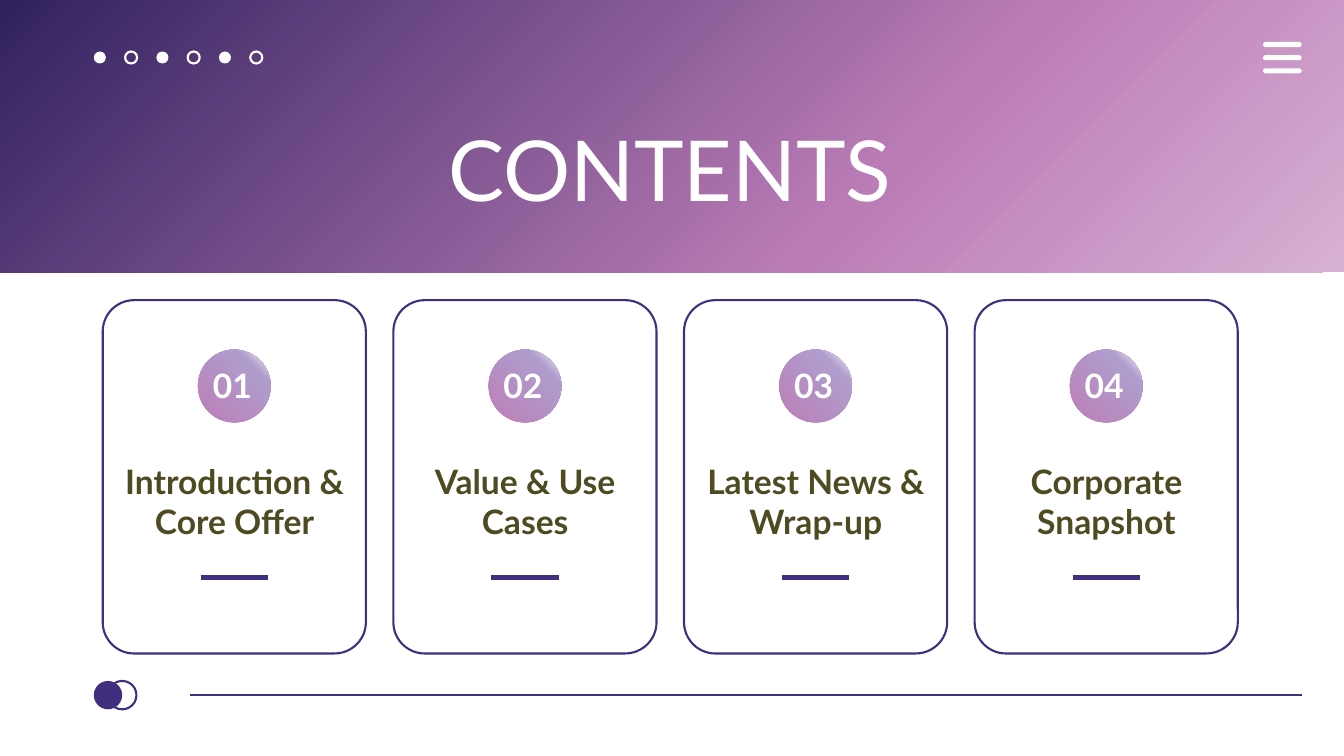
from lxml import etree
from pptx import Presentation
from pptx.dml.color import RGBColor
from pptx.enum import shapes, text
from pptx.oxml.ns import qn
from pptx.util import Pt

INDIGO, WHITE, OLIVE = "402E7F", "FFFFFF", "4E4B22"
Shape = shapes.MSO_SHAPE


def add_figure(kind, left, top, width, height, fill=None, line=None, angle=0):
    """Add a preset shape; fill is a hex colour or a list of (percent, hex) stops."""
    figure = slide.shapes.add_shape(kind, Pt(left), Pt(top), Pt(width), Pt(height))
    figure.shadow.inherit = False
    if fill is None:
        figure.fill.background()
    elif isinstance(fill, str):
        figure.fill.solid()
        figure.fill.fore_color.rgb = RGBColor.from_string(fill)
    else:
        figure.fill.gradient()
        figure.fill.gradient_angle = angle
        stops = figure._element.spPr.find(".//" + qn("a:gsLst"))
        for stop in list(stops):
            stops.remove(stop)
        for percent, color in fill:
            stop = etree.SubElement(stops, qn("a:gs"), pos=str(percent * 1000))
            etree.SubElement(stop, qn("a:srgbClr"), val=color)
    if line:
        figure.line.color.rgb = RGBColor.from_string(line)
        figure.line.width = Pt(1.5)
    else:
        figure.line.fill.background()
    return figure


def add_rule(left, right, y, weight):
    rule = slide.shapes.add_connector(
        shapes.MSO_CONNECTOR.STRAIGHT, Pt(left), Pt(y), Pt(right), Pt(y))
    rule.line.color.rgb = RGBColor.from_string(INDIGO)
    rule.line.width = Pt(weight)
    etree.SubElement(rule._element.spPr, qn("a:effectLst"))


prs = Presentation()
prs.slide_width, prs.slide_height = Pt(960), Pt(540)
slide = prs.slides.add_slide(prs.slide_layouts[5])

# Banner with its dots and menu bars
add_figure(Shape.RECTANGLE, 0, 0, 960, 194.6,
           [(0, "D7B1D4"), (34, "BC7DB7"), (100, "30225F")], angle=135)
for i in range(6):
    dot_style = {"line": WHITE} if i % 2 else {"fill": WHITE}
    add_figure(Shape.OVAL, 67 + i * 22.35, 36.8, 8.6, 8.6, **dot_style)
for i in range(3):
    bar = add_figure(Shape.ROUNDED_RECTANGLE, 902.2, 30 + i * 9.4, 27.6, 3.6, WHITE)
    bar.adjustments[0] = 0.5

title = slide.shapes.title
slide.shapes._spTree.append(title._element)  # bring in front of the banner
title.left, title.top, title.width, title.height = Pt(278), Pt(79.2), Pt(404.6), Pt(80)
title.text = "CONTENTS"
title_frame = title.text_frame
title_frame.auto_size = text.MSO_AUTO_SIZE.NONE
title_frame.vertical_anchor = text.MSO_ANCHOR.BOTTOM
title_frame.margin_left = title_frame.margin_bottom = Pt(3.6)
title_frame.margin_top = title_frame.margin_right = Pt(7.2)
heading = title_frame.paragraphs[0]
heading.alignment = text.PP_ALIGN.CENTER
heading.font.name, heading.font.size = "Lato", Pt(60)
heading.font.color.rgb = RGBColor.from_string(WHITE)

# Footer
add_rule(136, 929.8, 496.5, 1.5)
add_figure(Shape.OVAL, 67, 486.4, 20.3, 20.3, INDIGO)
add_figure(Shape.OVAL, 77.2, 486.4, 20.3, 20.3, line=INDIGO)

# Section cards
sections = ["Introduction & Core Offer", "Value & Use Cases",
            "Latest News & Wrap-up", "Corporate Snapshot"]
for i, section in enumerate(sections):
    left = 73.4 + i * 207.6
    card = add_figure(Shape.ROUNDED_RECTANGLE, left, 214.4, 188, 252.4, WHITE, INDIGO)
    card.adjustments[0] = 0.119
    card_color = card._element.spPr.find(qn("a:solidFill")).find(qn("a:srgbClr"))
    etree.SubElement(card_color, qn("a:alpha"), val="54000")
    add_rule(left + 70, left + 118, 412.6, 3.25)
    add_figure(Shape.OVAL, left + 68, 249.8, 52, 52,
               [(0, "BC7DB7"), (77, "AF9DCD"), (100, WHITE)], angle=45)
    labels = [(f"{i + 1:02}", 67, 257, 51, 39.6, WHITE),
              (section, -1.3, 325.4, 190.8, 65.5, OLIVE)]
    for wording, offset, top, width, height, color in labels:
        label = slide.shapes.add_textbox(Pt(left + offset), Pt(top), Pt(width), Pt(height))
        label.text_frame.word_wrap = True
        paragraph = label.text_frame.paragraphs[0]
        paragraph.text = wording
        paragraph.alignment = text.PP_ALIGN.CENTER
        paragraph.font.name, paragraph.font.size = "Lato", Pt(24)
        paragraph.font.bold = True
        paragraph.font.color.rgb = RGBColor.from_string(color)

prs.save("out.pptx")
